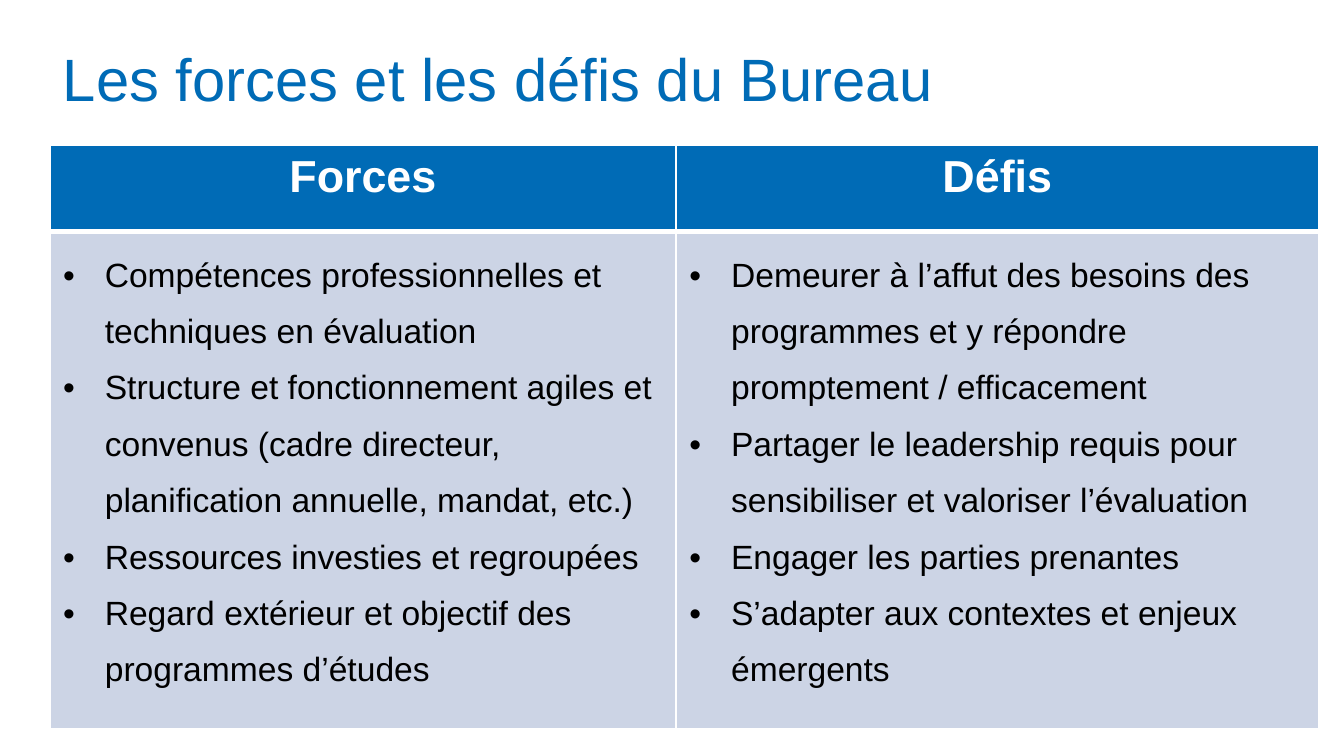
from lxml.etree import SubElement
from pptx import Presentation
from pptx.dml.color import RGBColor
from pptx.enum.text import MSO_ANCHOR, PP_ALIGN
from pptx.oxml.ns import qn
from pptx.util import Inches, Pt

COLORS = {"blue": "006BB6", "pale": "CCD4E5", "white": "FFFFFF", "black": "000000"}
TITLE = {"size": Pt(32), "name": "Arial"}
HEADER = {"size": Pt(24), "name": "Arial", "bold": True}
BODY = {"size": Pt(18), "name": "Arial", "bold": False}

COLUMNS = {
    "Forces": [
        "Compétences professionnelles et techniques en évaluation",
        "Structure et fonctionnement agiles et convenus (cadre directeur, "
        "planification annuelle, mandat, etc.)",
        "Ressources investies et regroupées",
        "Regard extérieur et objectif des programmes d’études",
    ],
    "Défis": [
        "Demeurer à l’affut des besoins des programmes et y répondre "
        "promptement / efficacement",
        "Partager le leadership requis pour sensibiliser et valoriser l’évaluation",
        "Engager les parties prenantes",
        "S’adapter aux contextes et enjeux émergents",
    ],
}


def rgb(name):
    return RGBColor.from_string(COLORS[name])


def write(p, text, style, color):
    r = p.add_run()
    r.text = text
    for key, value in style.items():
        setattr(r.font, key, value)
    r.font.color.rgb = rgb(color)


def add_bullet(p):
    pPr = p._p.get_or_add_pPr()
    indent = Inches(0.31)
    pPr.set("marL", str(indent))
    pPr.set("indent", str(-indent))
    SubElement(pPr, qn("a:buFont"), typeface="Arial")
    SubElement(pPr, qn("a:buChar"), char="•")


def format_cell(cell, fill, top=1, bottom=1):
    # Borders come before the fill in the cell properties
    tcPr = cell._tc.get_or_add_tcPr()
    for side, width in {"L": 1, "R": 1, "T": top, "B": bottom}.items():
        ln = SubElement(tcPr, qn(f"a:ln{side}"), w=str(Pt(width)))
        solid = SubElement(ln, qn("a:solidFill"))
        SubElement(solid, qn("a:srgbClr"), val=COLORS["white"])
    cell.fill.solid()
    cell.fill.fore_color.rgb = rgb(fill)


def add_title(s, text):
    tf = s.shapes.add_textbox(Inches(0.37), Inches(0.16), Inches(9.03), Inches(0.74)).text_frame
    tf.word_wrap = True
    tf.vertical_anchor = MSO_ANCHOR.BOTTOM
    p = tf.paragraphs[0]
    p.line_spacing = 0.9
    write(p, text, TITLE, "blue")


def fill_header(cell, text):
    format_cell(cell, "blue", bottom=3)
    p = cell.text_frame.paragraphs[0]
    p.alignment = PP_ALIGN.CENTER
    write(p, text, HEADER, "white")


def fill_list(cell, items):
    format_cell(cell, "pale", top=3)
    tf = cell.text_frame
    for i, item in enumerate(items):
        p = tf.add_paragraph() if i else tf.paragraphs[0]
        p.line_spacing = 1.5
        add_bullet(p)
        write(p, item, BODY, "black")


def add_columns_table(s, columns):
    widths, heights = (4.66, 4.78), (0.64, 1.96)
    frame = s.shapes.add_table(2, len(columns), Inches(0.37), Inches(1.08),
                               Inches(sum(widths)), Inches(sum(heights)))
    table = frame.table
    for col, width in zip(table.columns, widths):
        col.width = Inches(width)
    for row, height in zip(table.rows, heights):
        row.height = Inches(height)
    for c, (heading, items) in enumerate(columns.items()):
        fill_header(table.cell(0, c), heading)
        fill_list(table.cell(1, c), items)
    # The list row grows with its text, so the frame is taller than the rows
    frame.width, frame.height = Inches(9.43), Inches(4.29)


def main():
    prs = Presentation()
    prs.slide_width = Inches(10)
    prs.slide_height = prs.slide_width * 9 // 16
    s = prs.slides.add_slide(prs.slide_layouts[6])

    # Title
    add_title(s, "Les forces et les défis du Bureau")

    # Strengths and challenges
    add_columns_table(s, COLUMNS)

    prs.save("out.pptx")


if __name__ == "__main__":
    main()
